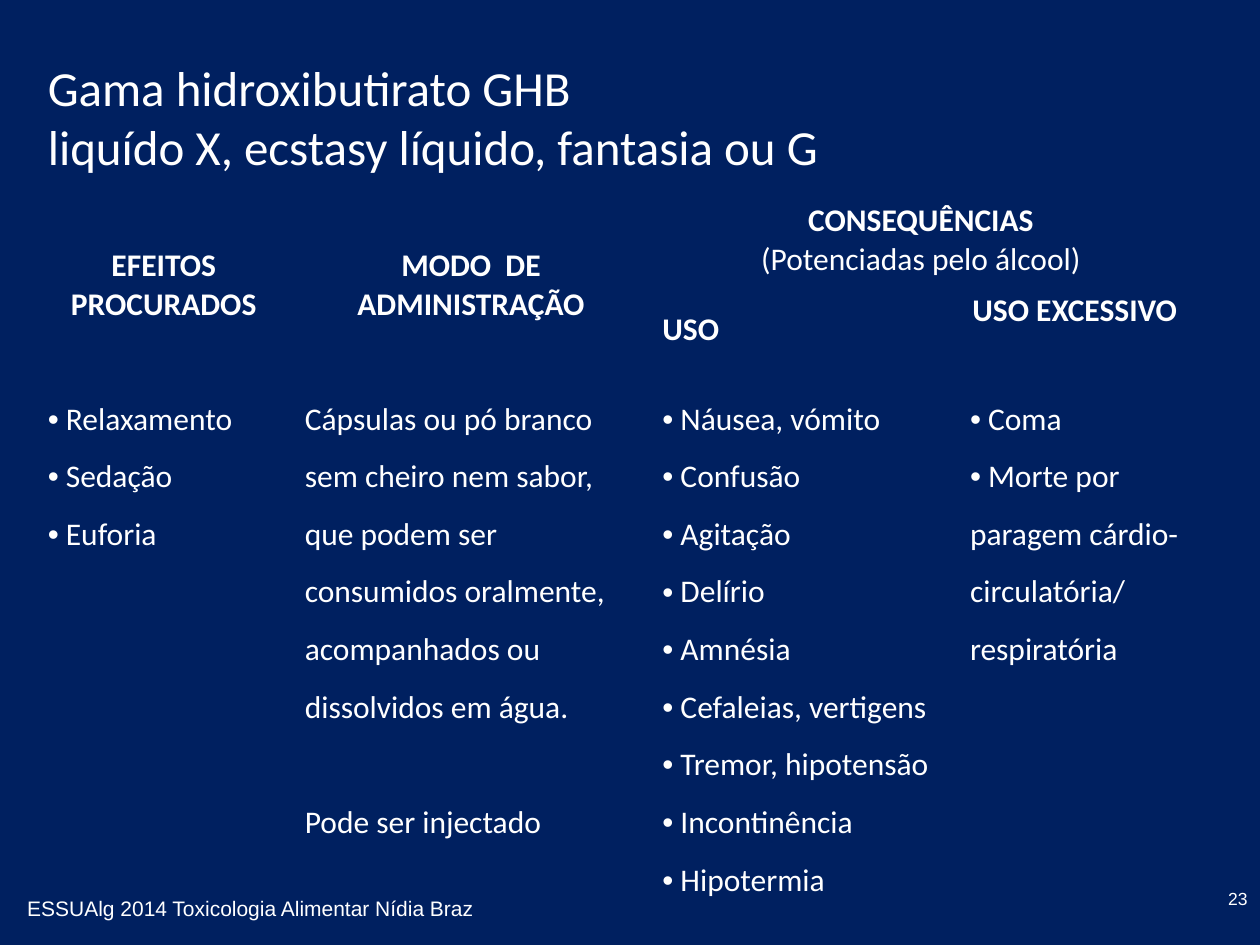
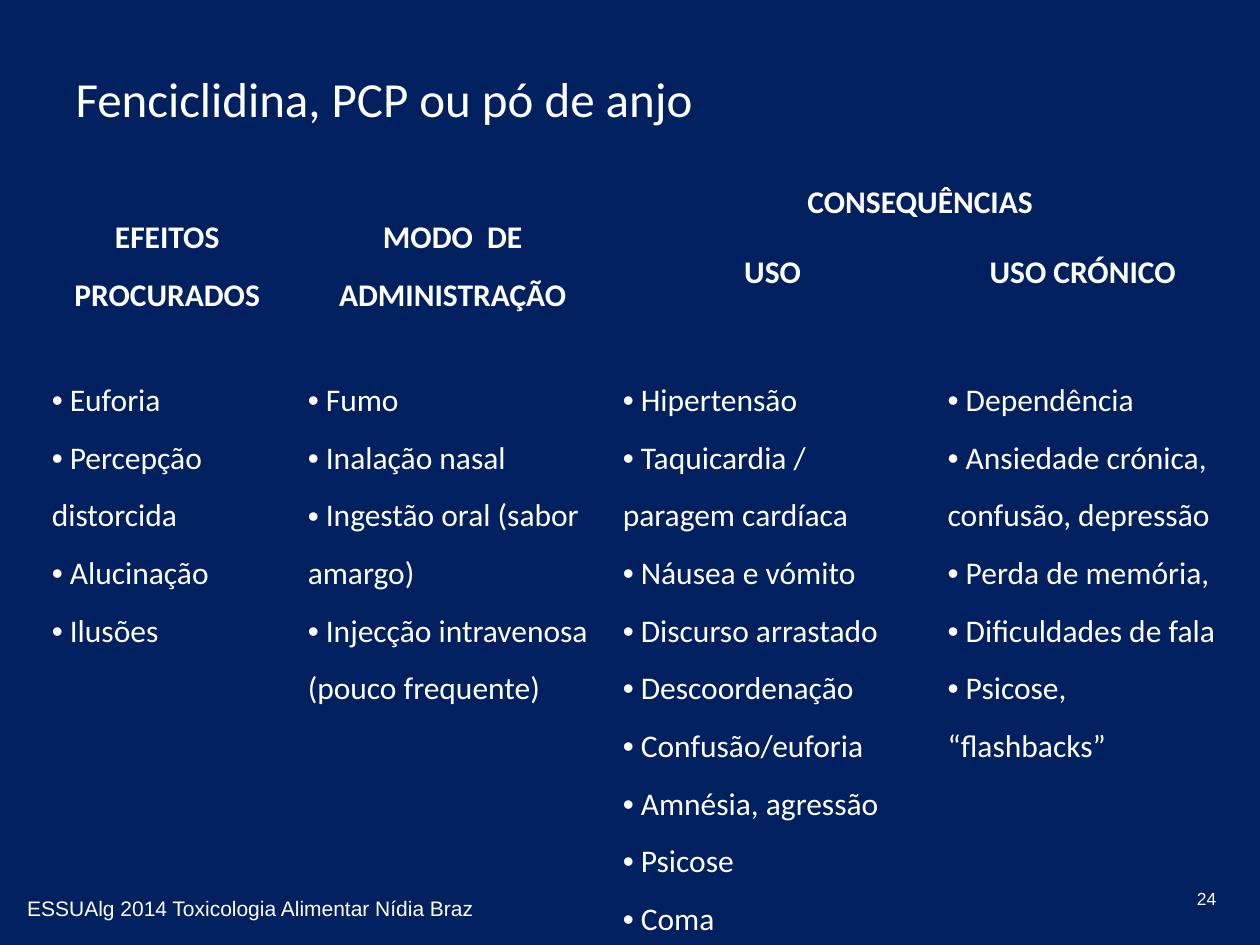
"""Build two slides that tabulate the effects and consequences of GHB and PCP."""
import pptx
import pptx.dml.color
import pptx.enum.text
import pptx.oxml.ns
import pptx.util
from lxml import etree

Cm = pptx.util.Cm
Pt = pptx.util.Pt
ALIGN = pptx.enum.text.PP_ALIGN
ANCHOR = pptx.enum.text.MSO_ANCHOR

COLORS = {"background": "002060", "text": "FFFFFF"}
BODY_FONT = "Calibri"
FOOTER_FONT = "Arial"
FOOTER = "ESSUAlg 2014 Toxicologia Alimentar Nídia Braz"
PLAIN_TABLE_STYLE = "{2D5ABB26-0587-4C30-8999-92F81FD0307C}"
BULLET = "•"


def paint(fill, color):
    fill.solid()
    fill.fore_color.rgb = pptx.dml.color.RGBColor.from_string(COLORS[color])


def add_bullet(paragraph):
    properties = paragraph._p.get_or_add_pPr()
    properties.set("marL", "0")
    properties.set("indent", "0")
    font = etree.SubElement(properties, pptx.oxml.ns.qn("a:buFont"))
    font.set("typeface", "Arial")
    mark = etree.SubElement(properties, pptx.oxml.ns.qn("a:buChar"))
    mark.set("char", BULLET)


def write(paragraph, text, size=18, font=BODY_FONT, bold=False,
          align=ALIGN.LEFT, spacing=1.0, before=0):
    paragraph.alignment = align
    paragraph.line_spacing = spacing
    paragraph.space_before = Pt(before)
    if text.startswith(BULLET):
        add_bullet(paragraph)
        text = text.removeprefix(BULLET)
    for index, line in enumerate(text.split("\n")):
        if index:
            paragraph.add_line_break()
        run = paragraph.add_run()
        run.text = line
        run.font.size = Pt(size)
        run.font.name = font
        run.font.bold = bold
        paint(run.font.fill, "text")


def next_paragraph(frame, index):
    return frame.add_paragraph() if index else frame.paragraphs[0]


def set_title(slide, text, left, top, width, height):
    title = slide.shapes.title
    title.left, title.top = Cm(left), Cm(top)
    title.width, title.height = Cm(width), Cm(height)
    title.text_frame.vertical_anchor = ANCHOR.MIDDLE
    write(title.text_frame.paragraphs[0], text, size=28)


def add_label(slide, text, left, top, width, height, **style):
    frame = slide.shapes.add_textbox(
        Cm(left), Cm(top), Cm(width), Cm(height)).text_frame
    frame.word_wrap = True
    write(frame.paragraphs[0], text, font=FOOTER_FONT, **style)


def add_footer(slide, number, number_left):
    add_label(slide, number, number_left, 17.78, 5.92, 1.27,
              size=10, align=ALIGN.RIGHT)
    add_label(slide, FOOTER, 0.3, 17.93, 11.51, 0.81, size=12)


def fill_header(cell, text, note=None, anchor=ANCHOR.MIDDLE,
                align=ALIGN.CENTER, spacing=1.0):
    cell.vertical_anchor = anchor
    write(cell.text_frame.paragraphs[0], text, bold=True, align=align,
          spacing=spacing)
    if note:
        write(cell.text_frame.add_paragraph(), note, align=align)


def fill_body(cell, items, gap=0):
    for index, item in enumerate(items):
        write(next_paragraph(cell.text_frame, index), item, spacing=1.5,
              before=gap if index else 0)


def add_effects_table(slide, left, top, widths, heights, spacing, note=None):
    table = slide.shapes.add_table(
        len(heights), len(widths), Cm(left), Cm(top),
        Cm(sum(widths)), Cm(sum(heights))).table
    table.first_row = table.horz_banding = False
    style = table._tbl.tblPr.find(pptx.oxml.ns.qn("a:tableStyleId"))
    style.text = PLAIN_TABLE_STYLE
    for column, width in zip(table.columns, widths):
        column.width = Cm(width)
    for row, height in zip(table.rows, heights):
        row.height = Cm(height)
    for cell in table.iter_cells():
        paint(cell.fill, "background")
    table.cell(0, 0).merge(table.cell(1, 0))
    table.cell(0, 1).merge(table.cell(1, 1))
    table.cell(0, 2).merge(table.cell(0, 3))
    fill_header(table.cell(0, 0), "EFEITOS PROCURADOS", spacing=spacing)
    fill_header(table.cell(0, 1), "MODO  DE ADMINISTRAÇÃO", spacing=spacing)
    fill_header(table.cell(0, 2), "CONSEQUÊNCIAS", note, spacing=spacing)
    return table


def add_ghb_slide(deck):
    slide = deck.slides.add_slide(deck.slide_layouts[5])
    set_title(slide, "Gama hidroxibutirato GHB\n"
              "liquído X, ecstasy líquido, fantasia ou G",
              0.71, 0.76, 23.42, 3.18)
    effects = add_effects_table(
        slide, 0.71, 3.94, (5.18, 7.21, 6.2, 4.73), (1.8, 1.75, 9.81),
        spacing=1.0, note="(Potenciadas pelo álcool)")
    fill_header(effects.cell(1, 2), "USO", align=ALIGN.LEFT)
    fill_header(effects.cell(1, 3), "USO EXCESSIVO", anchor=ANCHOR.TOP)
    fill_body(effects.cell(2, 0), ["• Relaxamento", "• Sedação", "• Euforia"])
    fill_body(effects.cell(2, 1), [
        "Cápsulas ou pó branco sem cheiro nem sabor, que podem ser "
        "consumidos oralmente, acompanhados ou dissolvidos em água.",
        "Pode ser injectado"], gap=33)
    fill_body(effects.cell(2, 2), [
        "• Náusea, vómito", "• Confusão", "• Agitação", "• Delírio",
        "• Amnésia", "• Cefaleias, vertigens", "• Tremor, hipotensão",
        "• Incontinência", "• Hipotermia"])
    fill_body(effects.cell(2, 3), [
        "• Coma", "• Morte por paragem cárdio-circulatória/",
        "respiratória"])
    add_footer(slide, "23", 19.48)


def add_pcp_slide(deck):
    slide = deck.slides.add_slide(deck.slide_layouts[5])
    set_title(slide, "Fenciclidina, PCP ou pó de anjo",
              1.27, 0.76, 19.76, 2.41)
    effects = add_effects_table(
        slide, 0.79, 3.18, (5.16, 6.35, 6.55, 5.95), (1.42, 2.55, 10.51),
        spacing=1.5)
    for column, use in enumerate(("USO", "USO CRÓNICO"), start=2):
        fill_header(effects.cell(1, column), use, anchor=ANCHOR.TOP,
                    spacing=1.5)
    symptoms = (
        ["• Euforia", "• Percepção distorcida", "• Alucinação", "• Ilusões"],
        ["• Fumo", "• Inalação nasal", "• Ingestão oral (sabor amargo)",
         "• Injecção intravenosa (pouco frequente)"],
        ["• Hipertensão", "• Taquicardia / paragem cardíaca",
         "• Náusea e vómito", "• Discurso arrastado", "• Descoordenação",
         "• Confusão/euforia", "• Amnésia, agressão", "• Psicose", "• Coma"],
        ["• Dependência", "• Ansiedade crónica, confusão, depressão",
         "• Perda de memória,", "• Dificuldades de fala",
         "• Psicose, “flashbacks”"])
    for column, items in enumerate(symptoms):
        fill_body(effects.cell(2, column), items)
    add_footer(slide, "24", 18.85)


def main():
    deck = pptx.Presentation()
    deck.slide_width, deck.slide_height = Cm(25.4), Cm(19.05)
    paint(deck.slide_master.background.fill, "background")
    add_ghb_slide(deck)
    add_pcp_slide(deck)
    deck.save("out.pptx")


if __name__ == "__main__":
    main()
